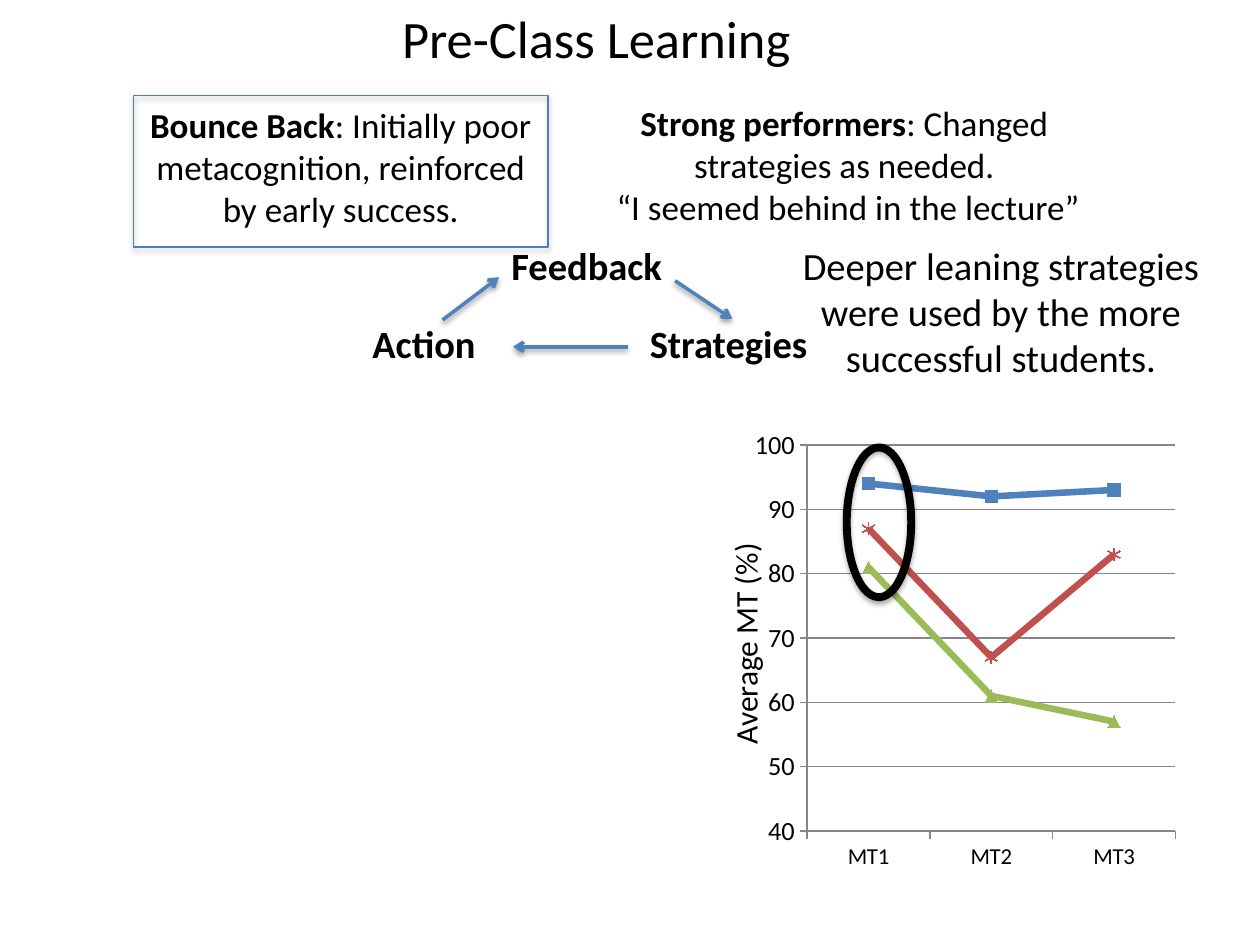
from lxml.etree import SubElement
from pptx import Presentation
from pptx.chart.data import CategoryChartData
from pptx.dml.color import RGBColor
from pptx.enum.chart import XL_CHART_TYPE, XL_MARKER_STYLE, XL_TICK_MARK
from pptx.enum.shapes import MSO_CONNECTOR, MSO_SHAPE
from pptx.enum.text import MSO_ANCHOR, PP_ALIGN
from pptx.oxml import parse_xml
from pptx.oxml.ns import nsdecls, qn
from pptx.util import Cm, Pt

BLACK = RGBColor(0x00, 0x00, 0x00)
BLUE = RGBColor(0x4F, 0x81, 0xBD)
RED = RGBColor(0xC0, 0x50, 0x4D)
GREEN = RGBColor(0x9B, 0xBB, 0x59)
FRAME_BLUE = RGBColor(0x4B, 0x7E, 0xBC)
GRAY = RGBColor(0x86, 0x86, 0x86)
FONT = "Calibri"

TITLE = "Pre-Class Learning"
CYCLE = [
    ("Feedback", (10.06, 4.75, 3.58, 1.19)),
    ("Strategies", (12.85, 6.32, 3.76, 1.19)),
    ("Action", (7.26, 6.32, 2.62, 1.19)),
]
CYCLE_ARROWS = [
    (13.61, 5.66, 14.76, 6.43),
    (12.65, 6.99, 10.34, 6.99),
    (8.92, 6.45, 10.06, 5.59),
]
FINDINGS = [
    ((11.71, 1.93, 10.62, 2.82), 20, [
        [("Strong performers", True), (": Changed strategies as needed.", False)],
        [(" “I seemed behind in the lecture”", False)],
    ]),
    ((15.67, 4.75, 9.02, 3.07), 22, [
        [("Deeper leaning strategies were used by the more successful students.", False)],
    ]),
    ((2.69, 1.96, 8.36, 2.82), 20, [
        [("Bounce Back", True),
         (": Initially poor metacognition, reinforced by early success.", False)],
    ]),
]
BOUNCE_FRAME = (2.69, 1.93, 8.36, 3.05)
AXIS_TITLE = "Average MT (%)"
AXIS_TITLE_BOX = (12.7, 12.42, 4.65, 1.02)
CHART_BOX = (15.04, 8.46, 8.79, 9.27)
PLOT_AREA = {"x": 0.14, "y": 0.055, "w": 0.845, "h": 0.84}
FIRST_TEST_RING = (17.07, 9.02, 1.3, 3.02)
TESTS = ["MT1", "MT2", "MT3"]
SCORES = [
    ("Series 1", (94, 92, 93), BLUE, XL_MARKER_STYLE.SQUARE),
    ("Series 2", (87, 67, 83), RED, XL_MARKER_STYLE.STAR),
    ("Series 3", (81, 61, 57), GREEN, XL_MARKER_STYLE.TRIANGLE),
]


def lengths(values):
    return [Cm(value) for value in values]


def style(font, size, bold=None):
    font.name = FONT
    font.size = Pt(size)
    font.bold = bold
    font.color.rgb = BLACK


def add_text(slide, box, size, paragraphs, align=PP_ALIGN.LEFT, wrap=True):
    textbox = slide.shapes.add_textbox(*lengths(box))
    frame = textbox.text_frame
    frame.word_wrap = wrap
    for index, runs in enumerate(paragraphs):
        paragraph = frame.add_paragraph() if index else frame.paragraphs[0]
        paragraph.alignment = align
        style(paragraph.font, size)
        for text, bold in runs:
            run = paragraph.add_run()
            run.text = text
            style(run.font, size, bold)
    return textbox


def add_shadow(shape, opacity):
    shape._element.spPr.append(parse_xml(
        f'<a:effectLst {nsdecls("a")}>'
        '<a:outerShdw blurRad="40000" dist="22000" dir="5400000" rotWithShape="0">'
        f'<a:srgbClr val="{BLACK}"><a:alpha val="{opacity * 1000}"/></a:srgbClr>'
        '</a:outerShdw></a:effectLst>'))


def add_outline(slide, preset, box, color, width):
    outline = slide.shapes.add_shape(preset, *lengths(box))
    outline.fill.background()
    outline.line.color.rgb = color
    outline.line.width = Pt(width)
    add_shadow(outline, 35)


def add_arrow(slide, ends):
    arrow = slide.shapes.add_connector(MSO_CONNECTOR.STRAIGHT, *lengths(ends))
    arrow.line.color.rgb = BLUE
    arrow.line.width = Pt(2)
    SubElement(arrow.line._get_or_add_ln(), qn("a:tailEnd"), type="arrow")
    add_shadow(arrow, 38)


def add_scores(slide):
    data = CategoryChartData()
    data.categories = TESTS
    for name, values, _, _ in SCORES:
        data.add_series(name, values)
    chart = slide.shapes.add_chart(
        XL_CHART_TYPE.LINE_MARKERS, *lengths(CHART_BOX), data).chart
    chart.has_legend = False
    chart.has_title = False
    style(chart.font, 10)
    chart.plots[0].vary_by_categories = False

    for axis, size in ((chart.category_axis, 13), (chart.value_axis, 15)):
        style(axis.tick_labels.font, size)
        axis.major_tick_mark = XL_TICK_MARK.OUTSIDE
        axis.format.line.color.rgb = GRAY
    scale = chart.value_axis
    scale.minimum_scale, scale.maximum_scale, scale.major_unit = 40, 100, 10
    scale.has_major_gridlines = True
    scale.major_gridlines.format.line.color.rgb = GRAY

    for series, (_, _, color, marker) in zip(chart.plots[0].series, SCORES):
        series.smooth = False
        series.format.line.color.rgb = color
        series.format.line.width = Pt(3.75)
        series.marker.style = marker
        series.marker.size = 7
        series.marker.format.fill.solid()
        series.marker.format.fill.fore_color.rgb = color
        series.marker.format.line.color.rgb = color

    plot_area = chart._chartSpace.chart.plotArea
    for old_layout in plot_area.findall(qn("c:layout")):
        plot_area.remove(old_layout)
    sizes = "".join(f'<c:{key} val="{value}"/>' for key, value in PLOT_AREA.items())
    plot_area.insert(0, parse_xml(
        f'<c:layout {nsdecls("c")}><c:manualLayout><c:layoutTarget val="inner"/>'
        '<c:xMode val="edge"/><c:yMode val="edge"/>'
        f'{sizes}</c:manualLayout></c:layout>'))


def main():
    presentation = Presentation()
    presentation.slide_width, presentation.slide_height = Cm(25.4), Cm(19.05)
    slide = presentation.slides.add_slide(presentation.slide_layouts[5])

    title = slide.shapes.title
    title.left, title.top, title.width, title.height = lengths((7.85, 0, 8.43, 1.55))
    title.text_frame.text = TITLE
    title.text_frame.word_wrap = False
    title.text_frame.vertical_anchor = MSO_ANCHOR.TOP
    title.text_frame.paragraphs[0].alignment = PP_ALIGN.LEFT
    style(title.text_frame.paragraphs[0].font, 30)

    for step, box in CYCLE:
        add_text(slide, box, 22, [[(step, True)]], wrap=False)
    for ends in CYCLE_ARROWS:
        add_arrow(slide, ends)
    for box, size, paragraphs in FINDINGS:
        add_text(slide, box, size, paragraphs, PP_ALIGN.CENTER)
    add_outline(slide, MSO_SHAPE.RECTANGLE, BOUNCE_FRAME, FRAME_BLUE, 0.75)

    axis_title = add_text(slide, AXIS_TITLE_BOX, 18, [[(AXIS_TITLE, False)]])
    axis_title.rotation = 270
    add_scores(slide)
    add_outline(slide, MSO_SHAPE.OVAL, FIRST_TEST_RING, BLACK, 4.5)

    presentation.save("out.pptx")


if __name__ == "__main__":
    main()
